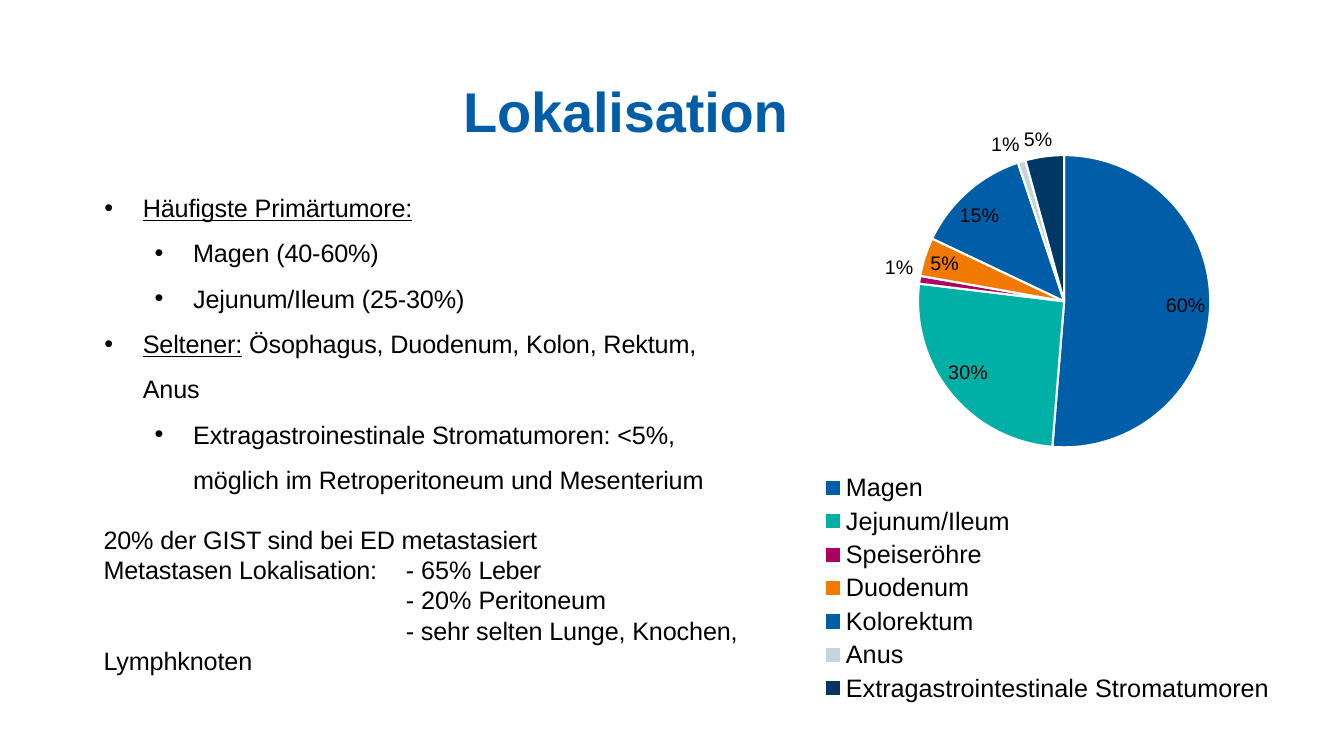
"""Slide on where GIST tumours occur, with a pie chart of the sites."""
from dataclasses import dataclass

from lxml.etree import SubElement
from pptx import Presentation
from pptx.chart.data import CategoryChartData
from pptx.dml.color import RGBColor
from pptx.enum.chart import XL_CHART_TYPE as ChartType
from pptx.enum.chart import XL_LABEL_POSITION as LabelPos
from pptx.enum.chart import XL_LEGEND_POSITION as LegendPos
from pptx.enum.text import PP_ALIGN as Align
from pptx.oxml.ns import qn
from pptx.util import Cm, Pt


@dataclass(frozen=True)
class Theme:
    font: str = "Arial"
    blue: str = "005EA8"
    black: str = "000000"
    white: str = "FFFFFF"
    slices: tuple = ("005EA8", "00AFA5", "AE0060", "F17900", "005EA8", "C5D5DB", "003865")
    title: int = 40
    body: int = 18
    label: int = 14


theme = Theme()


def style(font, size, color):
    font.name = theme.font
    font.size = Pt(size)
    font.color.rgb = RGBColor.from_string(color)


def add_run(p, text, size, color, spacing=-10):
    r = p.add_run()
    r.text = text
    style(r.font, size, color)
    r.font._element.set("spc", str(spacing))
    return r


prs = Presentation()
prs.slide_width, prs.slide_height = Cm(33.87), Cm(19.05)
s = prs.slides.add_slide(prs.slide_layouts[6])

tf = s.shapes.add_textbox(Cm(5.92), Cm(1.93), Cm(19.69), Cm(1.7)).text_frame
tf.word_wrap = True
tf.margin_left = tf.margin_top = tf.margin_right = tf.margin_bottom = 0
p = tf.paragraphs[0]
p.alignment = Align.CENTER
add_run(p, "Lokalisation", theme.title, theme.blue).font.bold = True

tf = s.shapes.add_textbox(Cm(2.36), Cm(4.34), Cm(16.94), Cm(12.95)).text_frame
tf.word_wrap = True

bullets = [
    (0, "Häufigste Primärtumore:", ""),
    (1, "", "Magen (40-60%)"),
    (1, "", "Jejunum/Ileum (25-30%)"),
    (0, "Seltener:", " Ösophagus, Duodenum, Kolon, Rektum, Anus"),
    (1, "", "Extragastroinestinale Stromatumoren: <5%, möglich im Retroperitoneum und Mesenterium"),
]
for i, (level, underlined, plain) in enumerate(bullets):
    p = tf.add_paragraph() if i else tf.paragraphs[0]
    p.level = level
    p.line_spacing = 1.5
    pPr = p._p.get_or_add_pPr()
    pPr.set("marL", str(Cm(0.99 + 1.27 * level)))
    pPr.set("indent", str(Cm(-0.97)))
    SubElement(pPr, qn("a:buFont"), typeface=theme.font)
    SubElement(pPr, qn("a:buChar"), char="•")
    if underlined:
        add_run(p, underlined, theme.body, theme.black).font.underline = True
    if plain:
        add_run(p, plain, theme.body, theme.black)

metastases = [
    [("20% der GIST sind bei ED metastasiert", -10)],
    [("Metastasen Lokalisation:\t- ", -10), ("65% ", 0), ("Leber", -30)],
    [("\t- ", -10), ("20% ", 0), ("Peritoneum", -10)],
    [("\t- sehr selten Lunge, Knochen, Lymphknoten", -10)],
]
for i, parts in enumerate(metastases):
    p = tf.add_paragraph()
    if i == 0:
        p.space_before = Pt(21)
    tabs = SubElement(p._p.get_or_add_pPr(), qn("a:tabLst"))
    SubElement(tabs, qn("a:tab"), pos=str(Cm(7.62)), algn="l")
    for text, spacing in parts:
        add_run(p, text, theme.body, theme.black, spacing)

data = CategoryChartData(number_format="0%")
data.categories = ["Magen", "Jejunum/Ileum", "Speiseröhre", "Duodenum", "Kolorektum",
                   "Anus", "Extragastrointestinale Stromatumoren"]
data.add_series("Series 1", [0.6, 0.3, 0.01, 0.05, 0.15, 0.01, 0.05])
chart = s.shapes.add_chart(ChartType.PIE, Cm(18.44), Cm(2.87), Cm(15.9), Cm(14.96), data).chart
style(chart.font, theme.label, theme.black)
chart.has_title = False
chart.has_legend = True
chart.legend.position = LegendPos.BOTTOM
chart.legend.include_in_layout = False
style(chart.legend.font, theme.body, theme.black)

plot = chart.plots[0]
plot.vary_by_categories = True
plot.has_data_labels = True
labels = plot.data_labels
labels.show_value = True
labels.show_percentage = False
labels.number_format = "0%"
labels.number_format_is_linked = False
labels.position = LabelPos.BEST_FIT
style(labels.font, theme.label, theme.black)
for i, color in enumerate(theme.slices):
    fmt = plot.series[0].points[i].format
    fmt.fill.solid()
    fmt.fill.fore_color.rgb = RGBColor.from_string(color)
    fmt.line.color.rgb = RGBColor.from_string(theme.white)
    fmt.line.width = Pt(1.5)

prs.save("out.pptx")
